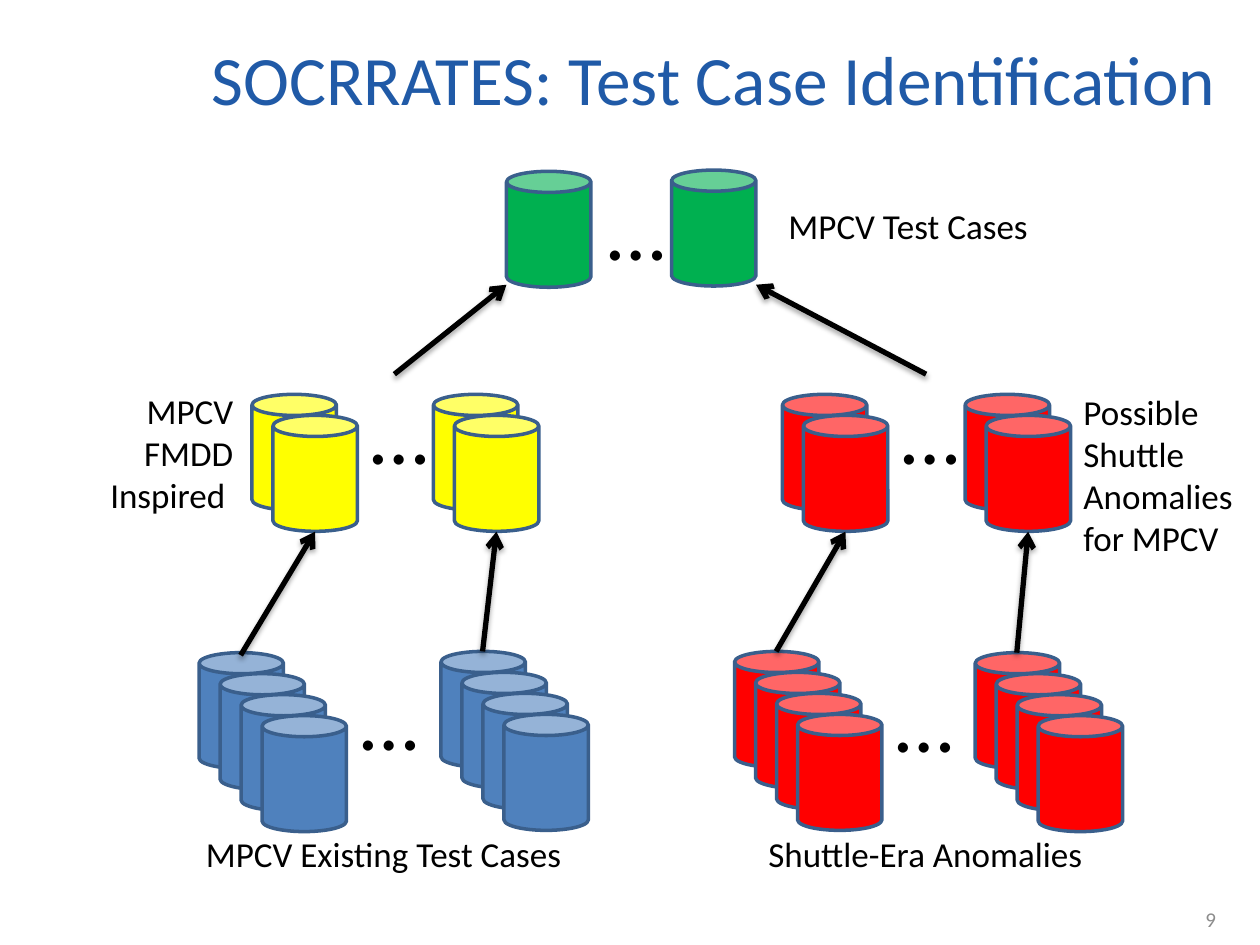
from dataclasses import dataclass

from lxml import etree
from pptx import Presentation
from pptx.dml.color import RGBColor
from pptx.enum.shapes import MSO_CONNECTOR, MSO_SHAPE
from pptx.enum.text import MSO_ANCHOR, PP_ALIGN
from pptx.oxml import parse_xml
from pptx.oxml.ns import nsdecls, qn
from pptx.slide import Slide
from pptx.text.text import TextFrame
from pptx.util import Inches, Pt

CAN = MSO_SHAPE.CAN
STRAIGHT = MSO_CONNECTOR.STRAIGHT
LEFT, CENTER, RIGHT = PP_ALIGN.LEFT, PP_ALIGN.CENTER, PP_ALIGN.RIGHT
TOP, MIDDLE = MSO_ANCHOR.TOP, MSO_ANCHOR.MIDDLE

CAN_WIDTH, CAN_HEIGHT = 0.67, 0.92
STACK_STEP = 1 / 6
ELLIPSIS_WIDTH, ELLIPSIS_HEIGHT = 0.58, 0.91


@dataclass(frozen=True)
class Theme:
    font: str = "Calibri"
    title: str = "205AA7"
    text: str = "000000"
    muted: str = "8C8C8C"
    background: str = "FFFFFF"
    outline: str = "3A5F8C"
    red: str = "FF0000"
    blue: str = "4F81BD"
    yellow: str = "FFFF00"
    green: str = "00B050"
    title_size: float = 39.6
    label_size: float = 20
    ellipsis_size: float = 48
    number_size: float = 12


@dataclass(frozen=True)
class Stack:
    left: float
    top: float


@dataclass(frozen=True)
class CaseSet:
    """Two stacks of cans with an ellipsis between them."""
    color: str
    depth: int
    first: Stack
    second: Stack
    ellipsis_left: float
    ellipsis_top: float
    ellipsis_fill: str | None = None


@dataclass(frozen=True)
class Label:
    text: str
    left: float
    top: float
    width: float
    height: float
    align: PP_ALIGN = LEFT


@dataclass(frozen=True)
class Arrow:
    start: tuple[float, float]
    end: tuple[float, float]


THEME = Theme()

CASE_SETS = (
    CaseSet(THEME.red, 4, Stack(5.83, 5.17), Stack(7.74, 5.18), 7.01, 5.26),
    CaseSet(THEME.blue, 4, Stack(1.58, 5.18), Stack(3.5, 5.17), 2.76, 5.24),
    CaseSet(THEME.yellow, 2, Stack(2, 3.13), Stack(3.44, 3.13), 2.84, 2.97),
    CaseSet(THEME.red, 2, Stack(6.21, 3.13), Stack(7.66, 3.13), 7.06, 2.97, THEME.background),
    CaseSet(THEME.green, 1, Stack(4.02, 1.36), Stack(5.33, 1.35), 4.72, 1.35),
)

LABELS = (
    Label("MPCV FMDD Inspired ", 0.58, 3.04, 1.37, 1.11, RIGHT),
    Label("MPCV Existing Test Cases", 1.2, 6.56, 3.69, 0.44, CENTER),
    Label("Shuttle-Era Anomalies", 5.43, 6.56, 3.83, 0.44, CENTER),
    Label("Possible Shuttle Anomalies for MPCV", 8.5, 3.05, 1.41, 1.45),
    Label("MPCV Test Cases", 6.16, 1.57, 2.5, 0.44),
)

ARROWS = (
    Arrow((1.91, 5.2), (2.5, 4.22)),
    Arrow((3.83, 5.17), (3.94, 4.22)),
    Arrow((6.16, 5.17), (6.71, 4.22)),
    Arrow((8.07, 5.18), (8.16, 4.22)),
    Arrow((3.13, 2.97), (4.02, 2.26)),
    Arrow((7.35, 2.97), (6, 2.26)),
)


def write_text(frame: TextFrame, text: str, size: float, color: str,
               align: PP_ALIGN, anchor: MSO_ANCHOR = TOP) -> None:
    frame.text = text
    frame.word_wrap = True
    frame.vertical_anchor = anchor
    para = frame.paragraphs[0]
    para.alignment = align
    font = para.runs[0].font
    font.name = THEME.font
    font.size = Pt(size)
    font.color.rgb = RGBColor.from_string(color)


def add_title(page: Slide, text: str) -> None:
    title = page.shapes.title
    title.left, title.top = Inches(1.33), Inches(0.08)
    title.width, title.height = Inches(8.67), Inches(1.08)
    write_text(title.text_frame, text, THEME.title_size, THEME.title, CENTER, MIDDLE)


def add_label(page: Slide, label: Label, size: float = THEME.label_size,
              color: str = THEME.text, anchor: MSO_ANCHOR = TOP,
              fill: str | None = None) -> None:
    box = page.shapes.add_textbox(Inches(label.left), Inches(label.top),
                                  Inches(label.width), Inches(label.height))
    if fill:
        box.fill.solid()
        box.fill.fore_color.rgb = RGBColor.from_string(fill)
    write_text(box.text_frame, label.text, size, color, label.align, anchor)


def add_stack(page: Slide, stack: Stack, depth: int, color: str) -> None:
    for level in range(depth):
        offset = level * STACK_STEP
        can = page.shapes.add_shape(CAN, Inches(stack.left + offset), Inches(stack.top + offset),
                                    Inches(CAN_WIDTH), Inches(CAN_HEIGHT))
        can.shadow.inherit = False
        can.fill.solid()
        can.fill.fore_color.rgb = RGBColor.from_string(color)
        can.line.color.rgb = RGBColor.from_string(THEME.outline)
        can.line.width = Pt(2)


def add_case_set(page: Slide, cases: CaseSet) -> None:
    add_stack(page, cases.first, cases.depth, cases.color)
    ellipsis = Label("…", cases.ellipsis_left, cases.ellipsis_top, ELLIPSIS_WIDTH, ELLIPSIS_HEIGHT)
    add_label(page, ellipsis, THEME.ellipsis_size, fill=cases.ellipsis_fill)
    add_stack(page, cases.second, cases.depth, cases.color)


def add_arrow(page: Slide, arrow: Arrow) -> None:
    """Draw a line with an open arrowhead and a soft shadow below it."""
    points = [Inches(value) for value in (*arrow.start, *arrow.end)]
    connector = page.shapes.add_connector(STRAIGHT, *points)
    connector.line.color.rgb = RGBColor.from_string(THEME.text)
    connector.line.width = Pt(3)
    properties = connector._element.spPr
    etree.SubElement(properties.find(qn("a:ln")), qn("a:tailEnd"), type="arrow")
    properties.append(parse_xml(
        f'<a:effectLst {nsdecls("a")}>'
        f'<a:outerShdw blurRad="{Pt(3.1)}" dist="{Pt(1.8)}" dir="5400000" rotWithShape="0">'
        f'<a:srgbClr val="{THEME.text}"><a:alpha val="35000"/></a:srgbClr>'
        '</a:outerShdw></a:effectLst>'))


def main() -> None:
    deck = Presentation()
    deck.slide_width, deck.slide_height = Inches(10), Inches(7.5)
    page = deck.slides.add_slide(deck.slide_layouts[5])
    add_title(page, "SOCRRATES: Test Case Identification")
    add_label(page, Label("9", 7.42, 7.17, 2.33, 0.25, RIGHT),
              THEME.number_size, THEME.muted, MIDDLE)
    for cases in CASE_SETS:
        add_case_set(page, cases)
    for label in LABELS:
        add_label(page, label)
    for arrow in ARROWS:
        add_arrow(page, arrow)
    deck.save("out.pptx")


if __name__ == "__main__":
    main()
